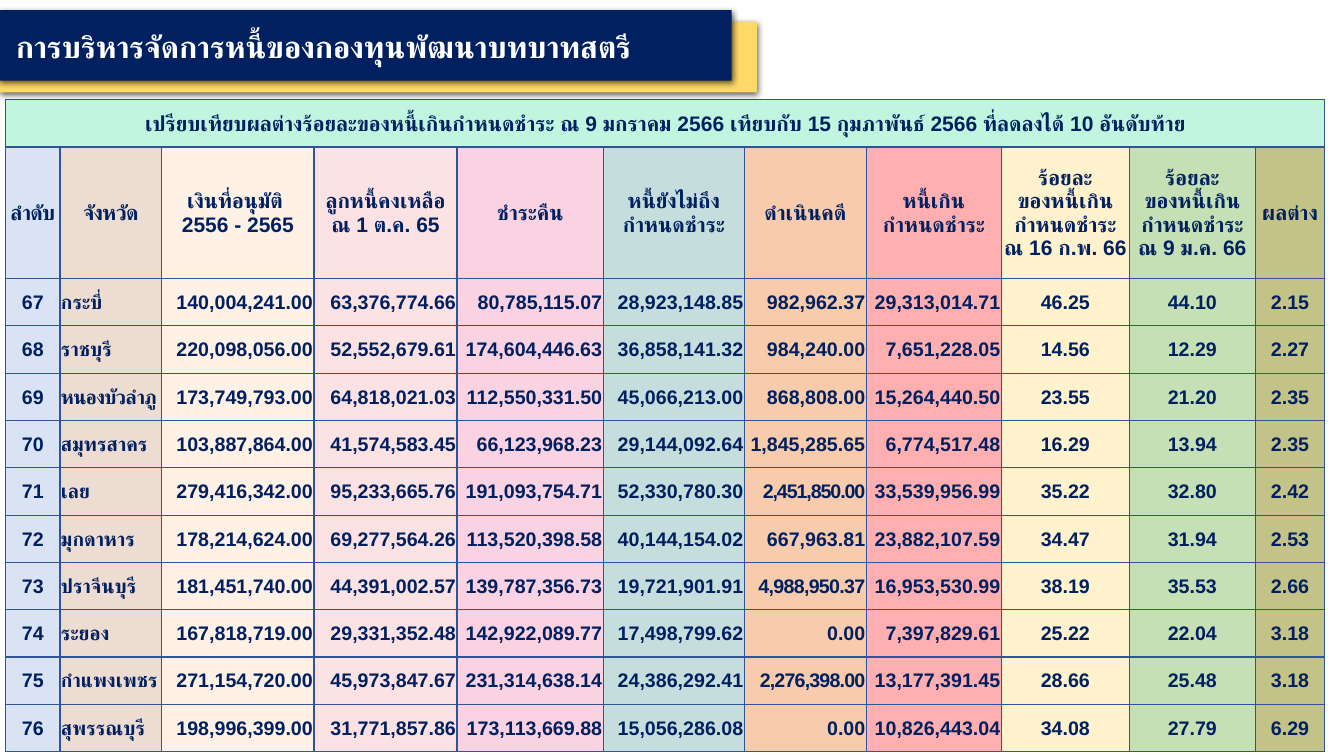
"""Build the slide comparing overdue debt rates of the ten lowest-ranked provinces."""
from copy import deepcopy
from lxml.etree import SubElement
from pptx import Presentation
from pptx.dml.color import RGBColor
from pptx.enum.shapes import MSO_SHAPE
from pptx.enum.text import MSO_ANCHOR, MSO_AUTO_SIZE, PP_ALIGN
from pptx.oxml import parse_xml
from pptx.oxml.ns import nsdecls, qn
from pptx.util import Pt

NAVY = "002060"
BORDER = "2F5597"


def color(value):
    return RGBColor.from_string(value)


def style_text(paragraph, size, text_color, spacing=0):
    for run in paragraph.runs:
        for name, value in {"name": "Arial", "size": Pt(size), "bold": True}.items():
            setattr(run.font, name, value)
        run.font.color.rgb = color(text_color)
        properties = run.font._element
        SubElement(properties, qn("a:cs")).set("typeface", "Arial")
        if spacing:
            properties.set("spc", str(round(spacing * 100)))
        for line_break in paragraph._p.findall(qn("a:br")):
            if len(line_break) == 0:
                line_break.append(deepcopy(properties))


presentation = Presentation()
presentation.slide_width = Pt(960)
presentation.slide_height = Pt(540)
slide = presentation.slides.add_slide(presentation.slide_layouts[6])

columns = [
    ("ลำดับ", 38.88, "DAE3F3", PP_ALIGN.CENTER),
    ("จังหวัด", 72.72, "EDDCD2", PP_ALIGN.LEFT),
    ("เงินที่อนุมัติ \v2556 - 2565", 108.72, "FFF1E6", PP_ALIGN.RIGHT),
    ("ลูกหนี้คงเหลือ\vณ 1 ต.ค. 65", 102.24, "FDE2E4", PP_ALIGN.RIGHT),
    ("ชำระคืน", 104.4, "FAD2E1", PP_ALIGN.RIGHT),
    ("หนี้ยังไม่ถึง\vกำหนดชำระ", 100.8, "C5DEDD", PP_ALIGN.RIGHT),
    ("ดำเนินคดี", 87.12, "F8CBAD", PP_ALIGN.RIGHT),
    ("หนี้เกิน\vกำหนดชำระ", 96.48, "FFAFAF", PP_ALIGN.RIGHT),
    ("ร้อยละ\vของหนี้เกิน\nกำหนดชำระ\nณ 16 ก.พ. 66", 91.44, "FFF2CC", PP_ALIGN.CENTER),
    ("ร้อยละ\vของหนี้เกิน\nกำหนดชำระ\nณ 9 ม.ค. 66", 90, "C5E0B4", PP_ALIGN.CENTER),
    ("ผลต่าง", 49.68, "C4C387", PP_ALIGN.CENTER),
]
provinces = [
    "67 กระบี่ 140,004,241.00 63,376,774.66 80,785,115.07 28,923,148.85 982,962.37 29,313,014.71 46.25 44.10 2.15",
    "68 ราชบุรี 220,098,056.00 52,552,679.61 174,604,446.63 36,858,141.32 984,240.00 7,651,228.05 14.56 12.29 2.27",
    "69 หนองบัวลำภู 173,749,793.00 64,818,021.03 112,550,331.50 45,066,213.00 868,808.00 15,264,440.50 23.55 21.20 2.35",
    "70 สมุทรสาคร 103,887,864.00 41,574,583.45 66,123,968.23 29,144,092.64 1,845,285.65 6,774,517.48 16.29 13.94 2.35",
    "71 เลย 279,416,342.00 95,233,665.76 191,093,754.71 52,330,780.30 2,451,850.00 33,539,956.99 35.22 32.80 2.42",
    "72 มุกดาหาร 178,214,624.00 69,277,564.26 113,520,398.58 40,144,154.02 667,963.81 23,882,107.59 34.47 31.94 2.53",
    "73 ปราจีนบุรี 181,451,740.00 44,391,002.57 139,787,356.73 19,721,901.91 4,988,950.37 16,953,530.99 38.19 35.53 2.66",
    "74 ระยอง 167,818,719.00 29,331,352.48 142,922,089.77 17,498,799.62 0.00 7,397,829.61 25.22 22.04 3.18",
    "75 กำแพงเพชร 271,154,720.00 45,973,847.67 231,314,638.14 24,386,292.41 2,276,398.00 13,177,391.45 28.66 25.48 3.18",
    "76 สุพรรณบุรี 198,996,399.00 31,771,857.86 173,113,669.88 15,056,286.08 0.00 10,826,443.04 34.08 27.79 6.29",
]
caption = (
    "เปรียบเทียบผลต่างร้อยละของหนี้เกินกำหนดชำระ ณ 9 มกราคม 2566 "
    "เทียบกับ 15 กุมภาพันธ์ 2566 ที่ลดลงได้ 10 อันดับท้าย"
)
tight_spacing = {
    "ลำดับ": -0.5,
    "จังหวัด": -0.5,
    "หนองบัวลำภู": -0.5,
    "2,451,850.00": -0.8,
    "4,988,950.37": -0.5,
    "2,276,398.00": -0.6,
}
rows = [[caption] + [""] * (len(columns) - 1), [column[0] for column in columns]]
rows += [line.split() for line in provinces]

table = slide.shapes.add_table(
    len(rows), len(columns), Pt(4), Pt(71.2), Pt(942.48), Pt(465.8)
).table
table.first_row = False
table.horz_banding = False
for table_column, (_, width, _, _) in zip(table.columns, columns):
    table_column.width = Pt(width)

for row_index, row in enumerate(rows):
    table.rows[row_index].height = Pt(94 if row_index == 1 else 33.8)
    for column_index, text in enumerate(row):
        _, _, fill, alignment = columns[column_index]
        cell = table.cell(row_index, column_index)
        cell.text = text
        cell.vertical_anchor = MSO_ANCHOR.MIDDLE
        for side, margin in {"left": 0.72, "right": 0.72, "top": 0.72, "bottom": 0}.items():
            setattr(cell, f"margin_{side}", Pt(margin))
        for edge in ("lnL", "lnR", "lnT", "lnB"):
            cell._tc.get_or_add_tcPr().append(parse_xml(
                f'<a:{edge} {nsdecls("a")} w="12700"><a:solidFill>'
                f'<a:srgbClr val="{BORDER}"/></a:solidFill></a:{edge}>'
            ))
        cell.fill.solid()
        cell.fill.fore_color.rgb = color("C0F6E0" if row_index == 0 else fill)
        for paragraph in cell.text_frame.paragraphs:
            paragraph.alignment = PP_ALIGN.CENTER if row_index < 2 else alignment
            style_text(paragraph, 15 if row_index < 2 else 14, NAVY, tight_spacing.get(text, 0))
table.cell(0, 0).merge(table.cell(0, len(columns) - 1))

banner = slide.shapes.add_group_shape()
for top, width, fill in ((15.6, 540.7, "FFD966"), (7.2, 522.7, NAVY)):
    bar = banner.shapes.add_shape(MSO_SHAPE.RECTANGLE, Pt(0), Pt(top), Pt(width), Pt(50.4))
    bar.fill.solid()
    bar.fill.fore_color.rgb = color(fill)
    bar.line.fill.background()
    bar.shadow.inherit = False
    bar._element.spPr.find(qn("a:effectLst")).append(parse_xml(
        f'<a:outerShdw {nsdecls("a")} blurRad="{Pt(4.5)}" dist="{Pt(1.5)}" dir="5400000" '
        'algn="t" rotWithShape="0"><a:srgbClr val="000000"><a:alpha val="63000"/>'
        '</a:srgbClr></a:outerShdw>'
    ))

title = banner.shapes.add_textbox(Pt(4.3), Pt(16.6), Pt(522.7), Pt(33.8)).text_frame
title.word_wrap = True
title.auto_size = MSO_AUTO_SIZE.SHAPE_TO_FIT_TEXT
title.text = "การบริหารจัดการหนี้ของกองทุนพัฒนาบทบาทสตรี"
style_text(title.paragraphs[0], 22, "FFFFFF")

presentation.save("out.pptx")
